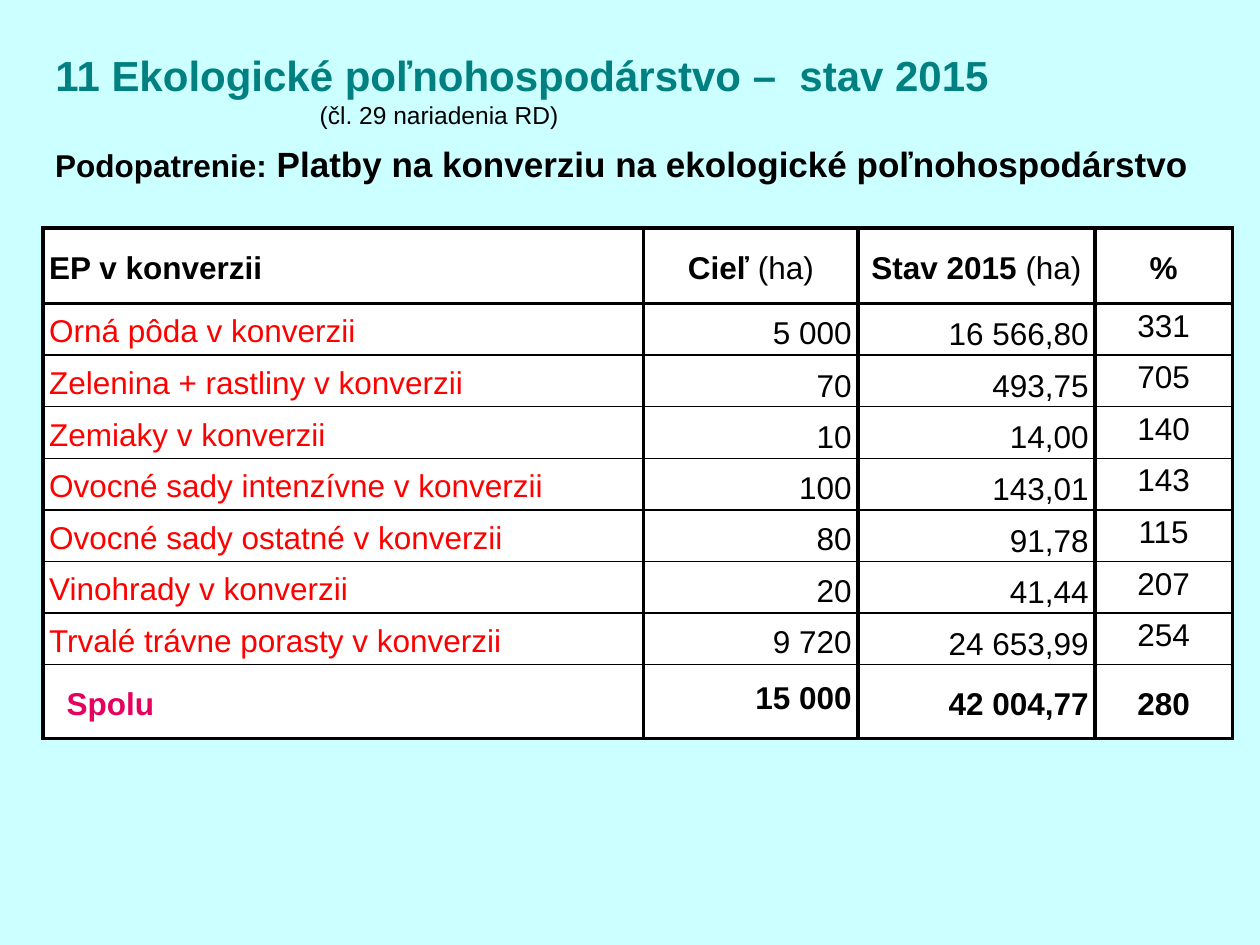
from dataclasses import dataclass

from lxml.etree import SubElement
from pptx import Presentation
from pptx.dml.color import RGBColor
from pptx.enum.text import MSO_ANCHOR, MSO_AUTO_SIZE, PP_ALIGN
from pptx.oxml.ns import qn
from pptx.util import Pt


@dataclass(frozen=True)
class Theme:
    font: str = "Arial"
    background: str = "CCFFFF"
    teal: str = "008080"
    black: str = "000000"
    white: str = "FFFFFF"
    red: str = "FF0000"
    magenta: str = "E4005C"
    title_size: float = 24
    subtitle_size: float = 20
    body_size: float = 18
    note_size: float = 14
    thick_line: float = 2.25
    thin_line: float = 1


THEME = Theme()


@dataclass(frozen=True)
class Run:
    text: str
    size: float = THEME.body_size
    color: str = THEME.black
    bold: bool = False


@dataclass(frozen=True)
class CellStyle:
    align: PP_ALIGN = PP_ALIGN.LEFT
    anchor: MSO_ANCHOR = MSO_ANCHOR.MIDDLE
    spacing: float = 1.15
    side_margin: float = 3.6
    edge_margin: float = 2.3
    indent: int = 0


@dataclass(frozen=True)
class Crop:
    name: str
    target: str
    actual: str
    percent: str
    target_spacing: float = 1.15


NAME = CellStyle()
TOTAL_NAME = CellStyle(indent=10)
HEADING = CellStyle(PP_ALIGN.CENTER)
PERCENT_HEADING = CellStyle(PP_ALIGN.CENTER, side_margin=0, edge_margin=0)
PERCENT = CellStyle(PP_ALIGN.CENTER, spacing=0.75, side_margin=0, edge_margin=0)
ACTUAL = CellStyle(PP_ALIGN.RIGHT, MSO_ANCHOR.BOTTOM, 0.75)

CROPS = [
    Crop("Orná pôda v konverzii", "5 000", "16 566,80", "331"),
    Crop("Zelenina + rastliny v konverzii", "70", "493,75", "705", 0.75),
    Crop("Zemiaky v konverzii", "10", "14,00", "140", 0.75),
    Crop("Ovocné sady intenzívne v konverzii", "100", "143,01", "143"),
    Crop("Ovocné sady ostatné v konverzii", "80", "91,78", "115"),
    Crop("Vinohrady v konverzii", "20", "41,44", "207"),
    Crop("Trvalé trávne porasty v konverzii", "9 720", "24 653,99", "254"),
]
COLUMN_WIDTHS = [343.4, 122.4, 135.4, 78.5]
ROW_HEIGHTS = [43.2] + [28.6] * len(CROPS) + [42.5]


def add_runs(paragraph, runs: list[Run]) -> None:
    for item in runs:
        run = paragraph.add_run()
        run.text = item.text
        run.font.name = THEME.font
        run.font.size = Pt(item.size)
        run.font.bold = item.bold
        run.font.color.rgb = RGBColor.from_string(item.color)


def set_indent(paragraph, points: float) -> None:
    properties = paragraph._p.get_or_add_pPr()
    properties.set("marL", str(Pt(points)))
    properties.set("indent", "0")


def add_border(cell, side: str, width: float) -> None:
    line = SubElement(cell._tc.get_or_add_tcPr(), qn(f"a:{side}"), w=str(Pt(width)))
    fill = SubElement(line, qn("a:solidFill"))
    SubElement(fill, qn("a:srgbClr"), val=THEME.black)


def fill_cell(cell, style: CellStyle, runs: list[Run], top: float, bottom: float) -> None:
    sides = {"lnL": THEME.thick_line, "lnR": THEME.thick_line, "lnT": top, "lnB": bottom}
    for side, width in sides.items():
        add_border(cell, side, width)
    cell.fill.solid()
    cell.fill.fore_color.rgb = RGBColor.from_string(THEME.white)
    cell.vertical_anchor = style.anchor
    cell.margin_left = cell.margin_right = Pt(style.side_margin)
    cell.margin_top = cell.margin_bottom = Pt(style.edge_margin)
    paragraph = cell.text_frame.paragraphs[0]
    paragraph.alignment = style.align
    paragraph.line_spacing = style.spacing
    if style.indent:
        set_indent(paragraph, style.indent)
    add_runs(paragraph, runs)


def table_rows() -> list[list[tuple[CellStyle, list[Run]]]]:
    header = [
        (NAME, [Run("EP v konverzii", bold=True)]),
        (HEADING, [Run("Cieľ ", bold=True), Run("(ha)")]),
        (HEADING, [Run("Stav 2015 ", bold=True), Run("(ha)")]),
        (PERCENT_HEADING, [Run("%", bold=True)]),
    ]
    body = [
        [
            (NAME, [Run(crop.name, color=THEME.red)]),
            (CellStyle(PP_ALIGN.RIGHT, MSO_ANCHOR.BOTTOM, crop.target_spacing), [Run(crop.target)]),
            (ACTUAL, [Run(crop.actual)]),
            (PERCENT, [Run(crop.percent)]),
        ]
        for crop in CROPS
    ]
    total = [
        (TOTAL_NAME, [Run("Spolu", color=THEME.magenta, bold=True)]),
        (CellStyle(PP_ALIGN.RIGHT, spacing=0.75), [Run("15 000", bold=True)]),
        (CellStyle(PP_ALIGN.RIGHT), [Run("42 004,77", bold=True)]),
        (PERCENT_HEADING, [Run("280", bold=True)]),
    ]
    return [header, *body, total]


def add_title(slide) -> None:
    title = slide.shapes.title
    title.left, title.top, title.width, title.height = Pt(24.5), Pt(24.5), Pt(695.5), Pt(53.3)
    frame = title.text_frame
    frame.word_wrap = True
    frame.auto_size = MSO_AUTO_SIZE.NONE
    frame.vertical_anchor = MSO_ANCHOR.TOP
    heading, note = frame.paragraphs[0], frame.add_paragraph()
    set_indent(note, 151)
    heading.alignment = note.alignment = PP_ALIGN.LEFT
    add_runs(heading, [Run("11 Ekologické poľnohospodárstvo –  stav 2015",
                           THEME.title_size, THEME.teal, True)])
    add_runs(note, [Run("(čl. 29 nariadenia RD)", THEME.note_size)])


def add_submeasure(slide) -> None:
    box = slide.shapes.add_textbox(Pt(24.5), Pt(77.8), Pt(664.6), Pt(31.7))
    box.text_frame.word_wrap = True
    add_runs(box.text_frame.paragraphs[0], [
        Run("Podopatrenie:", bold=True),
        Run(" Platby na konverziu na ekologické poľnohospodárstvo",
            THEME.subtitle_size, bold=True),
    ])


def add_conversion_table(slide) -> None:
    rows = table_rows()
    table = slide.shapes.add_table(
        len(rows), len(COLUMN_WIDTHS), Pt(24.5), Pt(130.3),
        Pt(sum(COLUMN_WIDTHS)), Pt(sum(ROW_HEIGHTS))).table
    table.first_row = table.horz_banding = False
    for column, width in zip(table.columns, COLUMN_WIDTHS):
        column.width = Pt(width)
    last = len(rows) - 1
    for index, row in enumerate(rows):
        table.rows[index].height = Pt(ROW_HEIGHTS[index])
        # Thick rules frame the header and the outside of the table
        top = THEME.thick_line if index <= 1 else THEME.thin_line
        bottom = THEME.thick_line if index in (0, last) else THEME.thin_line
        for column, (style, runs) in enumerate(row):
            fill_cell(table.cell(index, column), style, runs, top, bottom)


def main() -> None:
    presentation = Presentation()
    presentation.slide_width, presentation.slide_height = Pt(720), Pt(540)
    slide = presentation.slides.add_slide(presentation.slide_layouts.get_by_name("Title Only"))
    slide.background.fill.solid()
    slide.background.fill.fore_color.rgb = RGBColor.from_string(THEME.background)
    # Heading, submeasure line and results table
    add_title(slide)
    add_submeasure(slide)
    add_conversion_table(slide)
    presentation.save("out.pptx")


if __name__ == "__main__":
    main()
